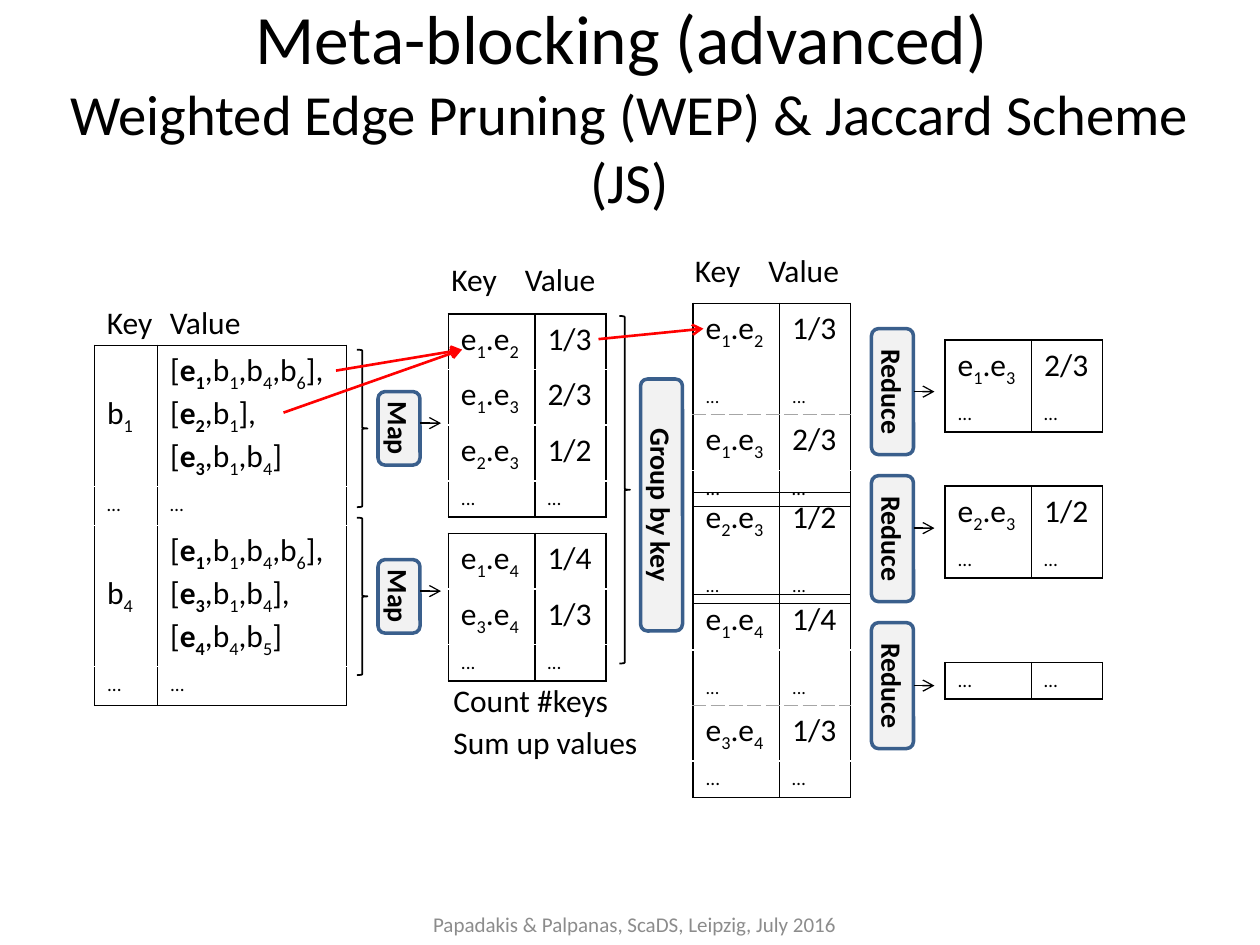
from itertools import groupby

from lxml import etree
from pptx import Presentation
from pptx import util as u
from pptx.dml.color import RGBColor
from pptx.enum import shapes, text
from pptx.oxml import ns

BLACK = RGBColor(0x00, 0x00, 0x00)
WHITE = RGBColor(0xFF, 0xFF, 0xFF)
GRAY = RGBColor(0x8C, 0x8C, 0x8C)
DASH_GRAY = RGBColor(0xA6, 0xA6, 0xA6)
RED = RGBColor(0xFF, 0x00, 0x00)
BOX_FILL = RGBColor(0xF2, 0xF2, 0xF2)
BOX_LINE = RGBColor(0x3A, 0x5F, 0x8C)
FONT = "Calibri"
PLAIN_TABLE = "{2D5ABB26-0587-4C30-8999-92F81FD0307C}"

# Row rules: colour, width in points, dash
SOLID = (BLACK, 1, "solid")
LIGHT = (WHITE, 1, "solid")
DASHED = (DASH_GRAY, 0.75, "dash")

# Table content: "_" lowers the next character, "*" switches bold
DOTS = ("...", "…")
LOW_DOTS = ("_._._.", "_._._.")
PAIR_COLUMNS, BLOCK_COLUMNS = (8.25, 6.75), (6, 18)
PAIR_ROW, DOTS_ROW = 5.3, 3.35
BLOCK_ROW, BLOCK_DOTS_ROW = 13.45, 3.7


def grid(units):
    """Slide grid: 120 columns by 90 rows of 1/12 inch."""
    return u.Inches(units / 12)


def pair(first, second, value):
    return f"e_{first}.e_{second}", value


def style_run(run, size, color=BLACK, bold=None):
    run.font.name = FONT
    run.font.size = u.Pt(size)
    run.font.color.rgb = color
    run.font.bold = bold


def write_markup(paragraph, markup, size):
    pieces, bold, low = [], False, False
    for character in markup:
        if character == "*":
            bold = not bold
        elif character == "_":
            low = True
        else:
            pieces.append((character, bold, low))
            low = False
    for (bold, low), group in groupby(pieces, key=lambda piece: piece[1:]):
        run = paragraph.add_run()
        run.text = "".join(piece[0] for piece in group)
        style_run(run, size, bold=bold)
        if low:
            run.font._element.set("baseline", "-25000")


def set_border(cell, side, rule):
    color, width, dash = rule
    line = etree.SubElement(cell._tc.get_or_add_tcPr(), ns.qn(f"a:ln{side}"),
                            w=str(u.Pt(width)))
    fill = etree.SubElement(line, ns.qn("a:solidFill"))
    etree.SubElement(fill, ns.qn("a:srgbClr"), val=str(color))
    etree.SubElement(line, ns.qn("a:prstDash"), val=dash)


def add_key_value_table(slide, left, top, columns, rows, rules):
    """rows: (height, (key, value)); rules: the line below each row or None."""
    heights = [height for height, _ in rows]
    frame = slide.shapes.add_table(len(rows), 2, grid(left), grid(top),
                                   grid(sum(columns)), grid(sum(heights)))
    table = frame.table
    table.first_row = table.horz_banding = False
    table._tbl.tblPr.find(ns.qn("a:tableStyleId")).text = PLAIN_TABLE
    for column, width in zip(table.columns, columns):
        column.width = grid(width)
    edges = [SOLID, *rules, SOLID]
    for index, (height, contents) in enumerate(rows):
        table.rows[index].height = grid(height)
        for cell, content in zip(table.rows[index].cells, contents):
            size = 11 if content in DOTS else 18
            for number, line in enumerate(content.split("\n")):
                frame_text = cell.text_frame
                paragraph = frame_text.add_paragraph() if number else frame_text.paragraphs[0]
                write_markup(paragraph, line, size)
            sides = zip("LRTB", (SOLID, SOLID, edges[index], edges[index + 1]))
            for side, rule in sides:
                if rule:
                    set_border(cell, side, rule)
            cell.fill.background()
            if content.startswith("b_"):
                cell.vertical_anchor = text.MSO_ANCHOR.MIDDLE


def add_label(slide, words, left, top, width, wrap=True, size=18, color=BLACK):
    box = slide.shapes.add_textbox(grid(left), grid(top), grid(width), grid(4.8))
    box.text_frame.word_wrap = wrap
    box.text_frame.text = words
    style_run(box.text_frame.paragraphs[0].runs[0], size, color)
    return box


def add_heading(slide, left, top, value_offset):
    add_label(slide, "Key", left, top, 8)
    add_label(slide, "Value", left + value_offset, top, 9.2, wrap=False)


def add_stage(slide, words, left, top, height):
    box = slide.shapes.add_shape(shapes.MSO_SHAPE.ROUNDED_RECTANGLE,
                                 grid(left), grid(top), grid(4), grid(height))
    box.shadow.inherit = False
    box.fill.solid()
    box.fill.fore_color.rgb = BOX_FILL
    box.line.color.rgb = BOX_LINE
    box.line.width = u.Pt(2)
    frame = box.text_frame
    frame.margin_left = frame.margin_right = u.Inches(0.04)
    frame.margin_top = frame.margin_bottom = 0
    frame.vertical_anchor = text.MSO_ANCHOR.MIDDLE
    frame._txBody.bodyPr.set("vert", "vert")
    frame.text = words
    frame.paragraphs[0].alignment = text.PP_ALIGN.CENTER
    style_run(frame.paragraphs[0].runs[0], 16, bold=True)


def add_brace(slide, left, top, height):
    brace = slide.shapes.add_shape(shapes.MSO_SHAPE.RIGHT_BRACE,
                                   grid(left), grid(top), grid(1), grid(height))
    brace.shadow.inherit = False
    brace.fill.background()
    brace.line.color.rgb = BLACK
    brace.line.width = u.Pt(1)


def add_arrow(slide, start, end, color=BLACK, width=0.75):
    arrow = slide.shapes.add_connector(shapes.MSO_CONNECTOR.STRAIGHT,
                                       *map(grid, (*start, *end)))
    arrow.line.color.rgb = color
    arrow.line.width = u.Pt(width)
    etree.SubElement(arrow.line._get_or_add_ln(), ns.qn("a:tailEnd"), type="arrow")
    etree.SubElement(arrow._element.spPr, ns.qn("a:effectLst"))


def add_title(slide):
    title = slide.shapes.title
    title.left, title.top, title.width, title.height = map(grid, (1.4, 2.5, 117.1, 15))
    frame = title.text_frame
    frame.vertical_anchor = text.MSO_ANCHOR.MIDDLE
    frame.text = ("Meta-blocking (advanced) \v"
                  "Weighted Edge Pruning (WEP) & Jaccard Scheme (JS)")
    frame.paragraphs[0].alignment = text.PP_ALIGN.CENTER
    for run, size in zip(frame.paragraphs[0].runs, (39.6, 32.4)):
        style_run(run, size)


def add_tables(slide):
    dots, low = (DOTS_ROW, DOTS), (PAIR_ROW, LOW_DOTS)
    e12, e13, e23, e14, e34 = [
        (PAIR_ROW, pair(*entry)) for entry in
        ((1, 2, "1/3"), (1, 3, "2/3"), (2, 3, "1/2"), (1, 4, "1/4"), (3, 4, "1/3"))]
    pair_tables = [
        # Map output
        (42.7, 29.9, [e12, e13, e23, dots], [LIGHT] * 3),
        (42.7, 50.8, [e14, e34, dots], [LIGHT] * 2),
        # Grouped by key
        (66, 28.9, [e12, low, e13, dots], [None, DASHED, LIGHT]),
        (66, 56.6, [e14, low, e34, dots], [LIGHT, DASHED, LIGHT]),
        (66, 46.9, [e23, low], [None]),
        # Reduce output
        (90, 32.4, [e13, dots], [None]),
        (90, 46.3, [e23, dots], [None]),
        (90, 63.1, [dots], []),
    ]
    for left, top, rows, rules in pair_tables:
        add_key_value_table(slide, left, top, PAIR_COLUMNS, rows, rules)
    blocks = [
        (BLOCK_ROW, ("b_1", "[*e_1*,b_1,b_4,b_6],\n[*e_2*,b_1],\n[*e_3*,b_1,b_4]")),
        (BLOCK_DOTS_ROW, ("…", "…")),
        (BLOCK_ROW, ("b_4", "[*e_1*,b_1,b_4,b_6],\n[*e_3*,b_1,b_4],\n[*e_4*,b_4,b_5]")),
        (BLOCK_DOTS_ROW, ("...", "...")),
    ]
    add_key_value_table(slide, 9, 32.9, BLOCK_COLUMNS, blocks, [LIGHT] * 3)


def main():
    presentation = Presentation()
    presentation.slide_width, presentation.slide_height = grid(120), grid(90)
    slide = presentation.slides.add_slide(presentation.slide_layouts[5])
    add_title(slide)
    add_tables(slide)

    # Column headings and notes under the map output
    for heading in ((9, 28.3, 6), (41.8, 24.2, 7), (65, 23.3, 7)):
        add_heading(slide, *heading)
    add_label(slide, "Count #keys", 42, 64.3, 23)
    add_label(slide, "Sum up values", 42, 68.3, 25)

    # Processing stages with their braces and arrows
    for top in (37.3, 53.3):
        add_stage(slide, "Map", 36, top, 7)
        add_brace(slide, 34, top - 4, 15)
        add_arrow(slide, (40, top + 3), (42, top + 3))
    add_stage(slide, "Group by key", 61, 36.1, 24)
    add_brace(slide, 59, 30.1, 33.1)
    for top, arrow_y in ((31.3, 37.3), (45.3, 50.3), (59.3, 65.3)):
        add_stage(slide, "Reduce", 83, top, 12)
        add_arrow(slide, (87, arrow_y), (89, arrow_y))

    # Path of the pair e1.e2
    for start, end in (((27, 39.3), (44, 33.3)), ((32, 35.3), (44, 33.3)),
                       ((57, 32.3), (67, 31.3))):
        add_arrow(slide, start, end, RED, 1.5)

    # Footer
    footer = add_label(slide, "Papadakis & Palpanas, ScaDS, Leipzig, July 2016",
                       39.2, 85.6, 42.5, size=12, color=GRAY)
    footer.text_frame.vertical_anchor = text.MSO_ANCHOR.MIDDLE
    footer.text_frame.paragraphs[0].alignment = text.PP_ALIGN.CENTER

    presentation.save("out.pptx")


if __name__ == "__main__":
    main()
